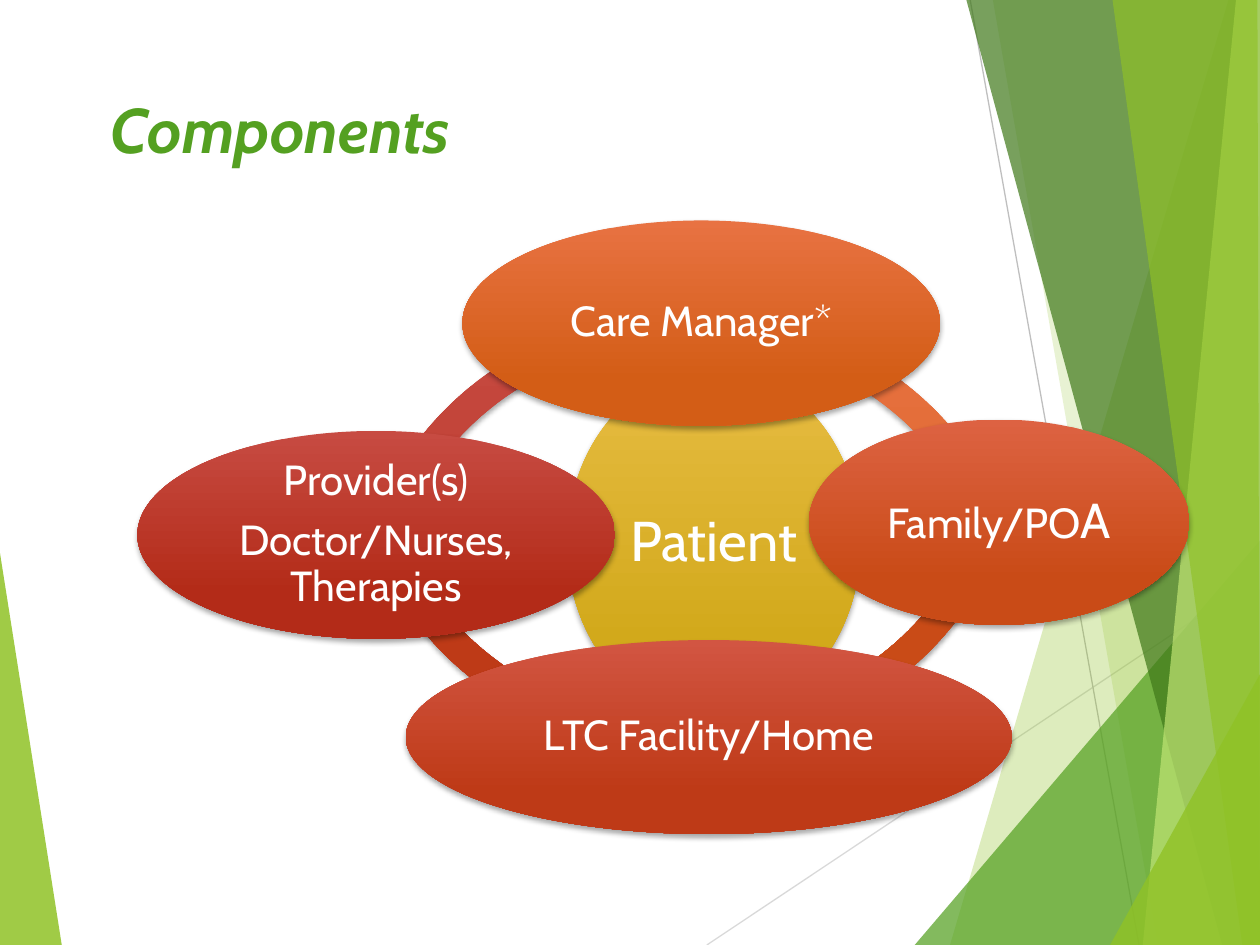
from lxml.etree import SubElement
from pptx import Presentation
from pptx.dml.color import RGBColor
from pptx.enum.shapes import MSO_CONNECTOR, MSO_SHAPE
from pptx.enum.text import MSO_ANCHOR, PP_ALIGN
from pptx.oxml.ns import qn
from pptx.util import Inches, Pt

FONT = "Cabin"
GREEN = "54A021"
LIME = "90C226"
WHITE = "FFFFFF"

# Gradient from top to bottom
RED = ("C74B42", "B32B18")
BRICK = ("D25542", "BE3A17")
RUST = ("DD6242", "C94B17")
ORANGE = ("E87242", "D35D16")
GOLD = ("E7BC43", "D2A91B")

# Corner points, colour, opacity in percent
LEFT_FACET = ([(0, 4.39), (0.49, 7.5), (0, 7.5)], LIME, 85)
RIGHT_FACETS = [
    ([(9.75, 0), (7.54, 7.5), (10, 7.5), (10, 0)], LIME, 30),
    ([(7.88, 0), (9.19, 7.5), (10, 7.5), (10, 0)], LIME, 20),
    ([(7.26, 7.5), (10, 4.29), (10, 7.5)], GREEN, 72),
    ([(7.67, 0), (9.7, 7.5), (10, 7.5), (10, 0)], "3F7819", 70),
    ([(9.81, 0), (9.07, 7.5), (10, 7.5), (10, 0)], "C0E474", 70),
    ([(8.83, 0), (9.86, 7.5), (10, 7.5), (9.98, 0)], LIME, 65),
    ([(8.81, 7.5), (10, 5.35), (10, 7.5)], LIME, 80),
]
HAIRLINES = [((5.61, 7.5), (10, 4.57), "D9D9D9"), ((7.7, 0), (9.04, 7.5), "BFBFBF")]

# Left, top, start and end angle in degrees (clockwise from the right), gradient
ARC_SIZE = 5.07
ARC_THICKNESS = 0.046
ARCS = [
    (2.8, 2.5, 198.58, 275.26, RED),
    (2.78, 0.86, 82.88, 159.94, BRICK),
    (3.05, 0.84, 18.27, 89, RUST),
    (3.09, 2.51, 268.69, 338.92, ORANGE),
]

# Box, gradient, paragraphs made of (text, size) runs
ELLIPSES = [
    ((4.5, 2.92, 2.33, 2.78), GOLD, [[("Patient", 32)]]),
    ((3.67, 1.75, 3.79, 1.63), ORANGE, [[("Care Manager*", 24)]]),
    ((6.42, 3.33, 3.02, 1.63), RUST, [[("Family/PO", 24), ("A", 28)]]),
    ((3.22, 5.08, 4.81, 1.54), BRICK, [[("LTC Facility/Home", 24)]]),
    ((1.09, 3.42, 3.79, 1.65), RED,
     [[("Provider(s)", 24)], [("Doctor/Nurses, Therapies", 24)]]),
]


def color(value):
    return RGBColor.from_string(value)


def add_alpha(color_element, percent):
    SubElement(color_element, qn("a:alpha"), val=str(percent * 1000))


def add_facet(slide, points, fill, opacity):
    corners = [(Inches(x), Inches(y)) for x, y in points]
    builder = slide.shapes.build_freeform(*corners[0])
    builder.add_line_segments(corners[1:], close=True)
    shape = builder.convert_to_shape()
    shape.shadow.inherit = False
    shape.fill.solid()
    shape.fill.fore_color.rgb = color(fill)
    add_alpha(shape.element.spPr.find(".//" + qn("a:srgbClr")), opacity)
    shape.line.fill.background()


def add_hairline(slide, start, end, line_color):
    ends = [Inches(value) for value in start + end]
    connector = slide.shapes.add_connector(MSO_CONNECTOR.STRAIGHT, *ends)
    connector.line.color.rgb = color(line_color)
    connector.line.width = Pt(0.75)
    SubElement(connector.element.spPr, qn("a:effectLst"))


def add_glossy_shape(slide, kind, box, gradient):
    """Add a borderless shape with a vertical gradient and a soft shadow."""
    shape = slide.shapes.add_shape(kind, *[Inches(value) for value in box])
    shape.fill.gradient()
    shape.fill.gradient_angle = 270
    for stop, value, position in zip(shape.fill.gradient_stops, gradient, (0, 0.78)):
        stop.color.rgb = color(value)
        stop.position = position
    shape.line.fill.background()
    shape.shadow.inherit = False
    effects = shape.element.spPr.find(qn("a:effectLst"))
    shadow = SubElement(effects, qn("a:outerShdw"), blurRad=str(Pt(3)),
                        dist=str(Pt(2)), dir="5400000", rotWithShape="0")
    add_alpha(SubElement(shadow, qn("a:srgbClr"), val="000000"), 35)
    return shape


def add_arc(slide, left, top, start, end, gradient):
    box = (left, top, ARC_SIZE, ARC_SIZE)
    shape = add_glossy_shape(slide, MSO_SHAPE.BLOCK_ARC, box, gradient)
    # Angles are stored in 60000ths of a degree, adjustments in 100000ths
    shape.adjustments[0] = start * 0.6
    shape.adjustments[1] = end * 0.6
    shape.adjustments[2] = ARC_THICKNESS


def add_ellipse(slide, box, gradient, paragraphs):
    shape = add_glossy_shape(slide, MSO_SHAPE.OVAL, box, gradient)
    frame = shape.text_frame
    frame.word_wrap = True
    frame.vertical_anchor = MSO_ANCHOR.MIDDLE
    frame.margin_left = frame.margin_right = Inches(0.03)
    frame.margin_top = frame.margin_bottom = Inches(0.03)
    for index, runs in enumerate(paragraphs):
        paragraph = frame.add_paragraph() if index else frame.paragraphs[0]
        paragraph.alignment = PP_ALIGN.CENTER
        paragraph.line_spacing = 0.9
        paragraph.space_after = Pt(0.35 * runs[0][1])
        paragraph.font.name = FONT
        paragraph.font.color.rgb = color(WHITE)
        for text, size in runs:
            run = paragraph.add_run()
            run.text = text
            run.font.size = Pt(size)


def add_title(slide, text):
    box = slide.shapes.add_textbox(Inches(0.67), Inches(0.67), Inches(6.94), Inches(1.44))
    frame = box.text_frame
    frame.word_wrap = True
    frame.margin_left = Inches(0.21)
    paragraph = frame.paragraphs[0]
    paragraph.text = text
    font = paragraph.font
    font.name, font.size = FONT, Pt(36)
    font.bold = font.italic = True
    font.color.rgb = color(GREEN)


def main():
    presentation = Presentation()
    presentation.slide_width, presentation.slide_height = Inches(10), Inches(7.5)
    slide = presentation.slides.add_slide(presentation.slide_layouts[6])
    add_facet(slide, *LEFT_FACET)
    for hairline in HAIRLINES:
        add_hairline(slide, *hairline)
    for facet in RIGHT_FACETS:
        add_facet(slide, *facet)
    add_title(slide, "Components")
    for arc in ARCS:
        add_arc(slide, *arc)
    for ellipse in ELLIPSES:
        add_ellipse(slide, *ellipse)
    presentation.save("out.pptx")


if __name__ == "__main__":
    main()
